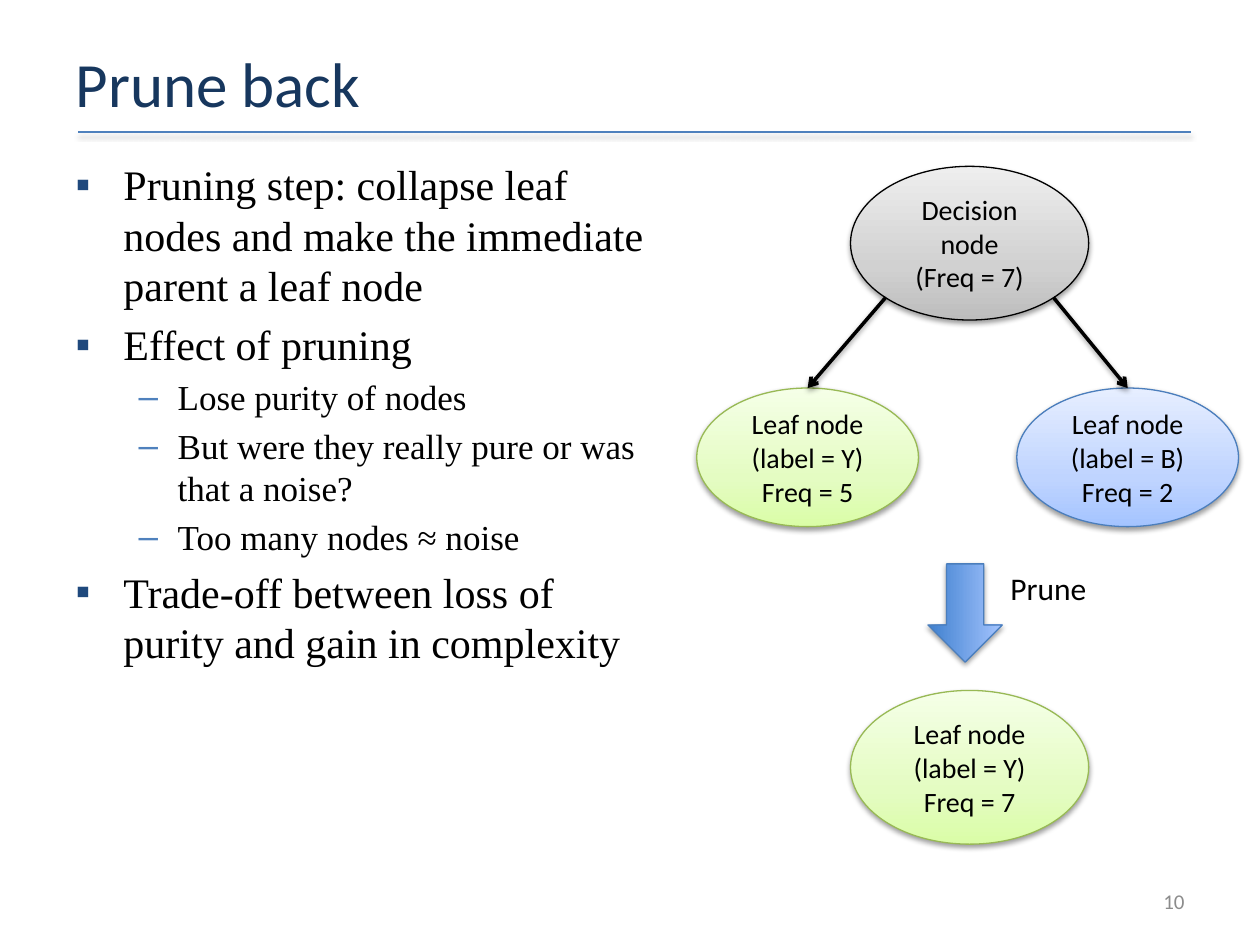
from lxml import etree
from pptx import Presentation
from pptx.dml.color import RGBColor
from pptx.enum import shapes, text
from pptx.oxml import parse_xml
from pptx.oxml import ns
from pptx.util import Inches, Pt

COLORS = {
    "title": "17375E", "text": "000000", "number": "8C8C8C", "rule": "4F81BD",
    "square": "1F497D", "dash": "4F81BD",
    "green line": "98B955", "blue line": "4B7EBC", "gray line": "000000",
}
GRADIENTS = {
    "green": [(0, "DAFDA7"), (35, "E4FCC2"), (100, "F5FFE7")],
    "gray": [(0, "BDBDBD"), (35, "D1D1D1"), (100, "EEEEEE")],
    "blue": [(0, "A4C4FF"), (35, "BFD4FF"), (100, "E6EEFF")],
    "arrow": [(0, "3F80CE"), (100, "A4C4FF")],
}
A = ns.nsdecls("a")
SHADOW = (f'<a:effectLst {A}><a:outerShdw blurRad="39370" dist="20320" dir="5400000" '
          'rotWithShape="0"><a:srgbClr val="000000"><a:alpha val="38000"/></a:srgbClr>'
          '</a:outerShdw></a:effectLst>')


def write(frame, lines, size, color, align=text.PP_ALIGN.LEFT, font="Calibri"):
    """Fill a text frame with one paragraph per line."""
    frame.word_wrap = True
    frame.text = "\n".join(lines)
    for para in frame.paragraphs:
        para.alignment = align
        for span in para.runs:
            for name, value in {"size": Pt(size), "name": font}.items():
                setattr(span.font, name, value)
            span.font.color.rgb = RGBColor.from_string(COLORS[color])


def decorate(shape, line, width, gradient=None):
    """Give a shape or connector its outline, shadow and gradient."""
    shape.line.color.rgb = RGBColor.from_string(COLORS[line])
    shape.line.width = Pt(width)
    if gradient:
        shape.fill.gradient()
        shape.fill.gradient_angle = 90
        stops = shape._element.spPr.find(ns.qn("a:gradFill")).find(ns.qn("a:gsLst"))
        stops.clear()
        for position, color in GRADIENTS[gradient]:
            stop = etree.SubElement(stops, ns.qn("a:gs"), pos=str(position * 1000))
            etree.SubElement(stop, ns.qn("a:srgbClr"), val=color)
    shape._element.spPr.append(parse_xml(SHADOW))


deck = Presentation()
deck.slide_width, deck.slide_height = Inches(10), Inches(7.5)
page = deck.slides.add_slide(deck.slide_layouts[1])

# Title and the rule below it
title, body = page.placeholders
for holder, box in ((title, (0.5, 0.3, 9, 0.71)), (body, (0.5, 1.21, 4.76, 5.49))):
    for name, value in zip(("left", "top", "width", "height"), box):
        setattr(holder, name, Inches(value))
    holder.text_frame.auto_size = text.MSO_AUTO_SIZE.NONE
write(title.text_frame, ["Prune back"], 36, "title")
title.text_frame.vertical_anchor = text.MSO_ANCHOR.MIDDLE
rule = page.shapes.add_connector(shapes.MSO_CONNECTOR.STRAIGHT,
                                 Inches(0.62), Inches(1.05), Inches(9.45), Inches(1.05))
decorate(rule, "rule", 1)

# Bulleted list
ITEMS = [
    (0, "Pruning step: collapse leaf nodes and make the immediate parent a leaf node"),
    (0, "Effect of pruning"),
    (1, "Lose purity of nodes"),
    (1, "But were they really pure or was that a noise?"),
    (1, "Too many nodes ≈ noise"),
    (0, "Trade-off between loss of purity and gain in complexity"),
]
LEVELS = [(24, 0.38, 0.38, "▪", "square"), (20, 0.81, 0.31, "–", "dash")]
write(body.text_frame, [item for _, item in ITEMS], 24, "text", font="Times New Roman")
for para, (level, _) in zip(body.text_frame.paragraphs, ITEMS):
    size, margin, hanging, bullet, color = LEVELS[level]
    para.level = level
    para.runs[0].font.size = Pt(size)
    props = para._p.get_or_add_pPr()
    props.set("marL", str(Inches(margin)))
    props.set("indent", str(-Inches(hanging)))
    for xml in (f'<a:spcBef {A}><a:spcPct val="20000"/></a:spcBef>',
                f'<a:buClr {A}><a:srgbClr val="{COLORS[color]}"/></a:buClr>',
                f'<a:buFont {A} typeface="Arial"/>',
                f'<a:buChar {A} char="{bullet}"/>'):
        props.append(parse_xml(xml))

# Tree nodes: the decision node, its two leaves and the pruned result
BIG, SMALL = (1.89, 1.22), (1.76, 1.1)
NODES = [
    ("decision", 6.75, 1.32, BIG, "gray", ["Decision node", "(Freq = 7)"]),
    ("left leaf", 5.53, 3.08, SMALL, "green", ["Leaf node (label = Y)", "Freq = 5"]),
    ("right leaf", 8.07, 3.08, SMALL, "blue", ["Leaf node (label = B)", "Freq = 2"]),
    ("pruned leaf", 6.75, 5.48, BIG, "green", ["Leaf node", "(label = Y)", "Freq = 7"]),
]
nodes = {}
for name, left, top, size, color, lines in NODES:
    node = page.shapes.add_shape(shapes.MSO_SHAPE.OVAL,
                                 *map(Inches, (left, top, *size)))
    decorate(node, f"{color} line", 0.75, color)
    write(node.text_frame, lines, 16, "text", text.PP_ALIGN.CENTER)
    node.text_frame.vertical_anchor = text.MSO_ANCHOR.MIDDLE
    nodes[name] = node

# Branches from the decision node to its leaves
for start, leaf in ((7.03, "left leaf"), (8.36, "right leaf")):
    branch = page.shapes.add_connector(shapes.MSO_CONNECTOR.STRAIGHT,
                                       Inches(start), Inches(2.36), 0, 0)
    branch.end_connect(nodes[leaf], 0)
    decorate(branch, "text", 2)
    etree.SubElement(branch.line._get_or_add_ln(), ns.qn("a:tailEnd"), type="arrow")

# Pruning arrow
arrow = page.shapes.add_shape(shapes.MSO_SHAPE.RIGHT_ARROW,
                              Inches(7.27), Inches(4.57), Inches(0.78), Inches(0.59))
arrow.rotation = 90
decorate(arrow, "blue line", 0.75, "arrow")

# Arrow label and page number
label = page.shapes.add_textbox(Inches(7.92), Inches(4.47), Inches(1.18), Inches(0.4))
write(label.text_frame, ["Prune"], 18, "text")
number = page.shapes.add_textbox(Inches(7.17), Inches(6.95), Inches(2.33), Inches(0.4))
write(number.text_frame, ["10"], 12, "number", text.PP_ALIGN.RIGHT)
number.text_frame.vertical_anchor = text.MSO_ANCHOR.MIDDLE

deck.save("out.pptx")
